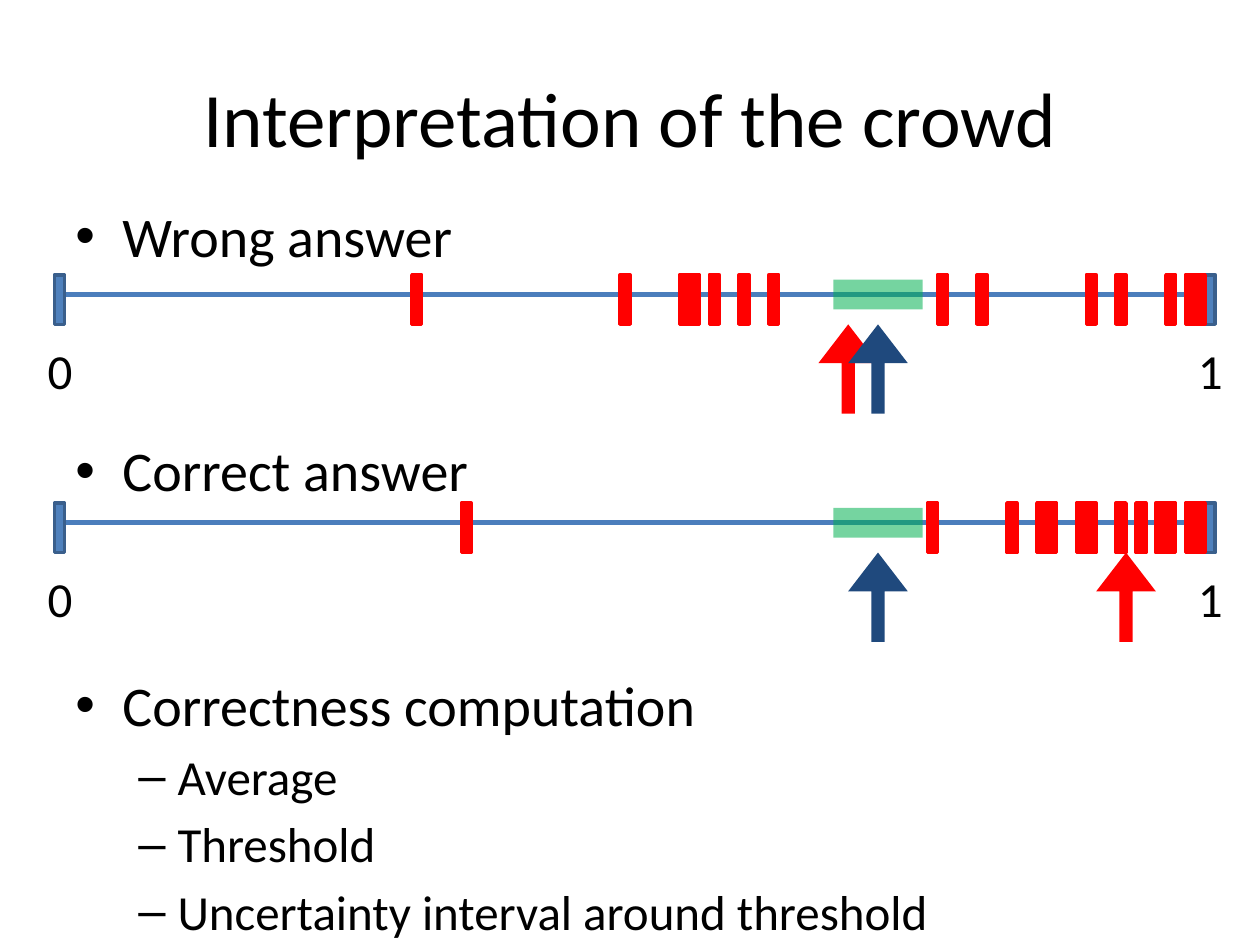
from dataclasses import dataclass
from lxml import etree
from pptx import Presentation
from pptx.dml.color import RGBColor
from pptx.enum.shapes import MSO_CONNECTOR, MSO_SHAPE
from pptx.enum.text import MSO_ANCHOR, PP_ALIGN
from pptx.oxml.ns import qn
from pptx.util import Cm, Pt

RECT, ARROW = MSO_SHAPE.RECTANGLE, MSO_SHAPE.UP_ARROW
LINE = MSO_CONNECTOR.STRAIGHT
TOP, MID = MSO_ANCHOR.TOP, MSO_ANCHOR.MIDDLE
LEFT, CENTER = PP_ALIGN.LEFT, PP_ALIGN.CENTER


@dataclass(frozen=True)
class Theme:
    font: str = "Calibri"
    text: str = "000000"
    axis: str = "4B7EBC"
    end: str = "4F81BD"
    edge: str = "3A5F8C"
    vote: str = "FF0000"
    limit: str = "1F497D"
    band: str = "00B050"
    title: int = 44
    head: int = 32
    sub: int = 28


THEME = Theme()
STEP = 0.2
LAST = 116
LIMIT = 16.6


def paint(fmt, color):
    fmt.solid()
    fmt.fore_color.rgb = RGBColor.from_string(color)


def add_box(shapes, x, y, w, h, anchor=TOP):
    frame = shapes.add_textbox(Cm(x), Cm(y), Cm(w), Cm(h)).text_frame
    frame.word_wrap = True
    frame.vertical_anchor = anchor
    return frame


def add_run(para, text, size):
    run = para.add_run()
    run.text = text
    run.font.name = THEME.font
    run.font.size = Pt(size)
    run.font.color.rgb = RGBColor.from_string(THEME.text)


def add_shape(shapes, kind, x, y, w, h, fill, edge=None):
    shape = shapes.add_shape(kind, Cm(x), Cm(y), Cm(w), Cm(h))
    shape.shadow.inherit = False
    paint(shape.fill, fill)
    if edge:
        paint(shape.line.fill, edge)
        shape.line.width = Pt(2)
    else:
        shape.line.fill.background()
    return shape


def add_title(shapes, x, y, w, h, text):
    para = add_box(shapes, x, y, w, h, MID).paragraphs[0]
    para.alignment = CENTER
    add_run(para, text, THEME.title)


def set_bullet(para, mark, left, hang):
    props = para._p.get_or_add_pPr()
    props.set("marL", str(Cm(left)))
    props.set("indent", str(-Cm(hang)))
    etree.SubElement(props, qn("a:buFont")).set("typeface", "Arial")
    etree.SubElement(props, qn("a:buChar")).set("char", mark)


def add_list(shapes, x, y, w, h, items):
    frame = add_box(shapes, x, y, w, h)
    for i, (level, text) in enumerate(items):
        para = frame.add_paragraph() if i else frame.paragraphs[0]
        para.alignment = LEFT
        para.level = level
        if level:
            mark, left, hang, gap, size = "–", 2.06, 0.79, 5, THEME.sub
        else:
            mark, left, hang, gap, size = "•", 0.95, 0.95, 95.5, THEME.head
        para.space_before = Pt(gap if i else 0)
        set_bullet(para, mark, left, hang)
        add_run(para, text, size)


def add_scale(shapes, x, y, votes):
    group = shapes.add_group_shape().shapes
    axis = group.add_connector(
        LINE, Cm(x), Cm(y + 0.39), Cm(x + LAST * STEP), Cm(y + 0.39))
    paint(axis.line.fill, THEME.axis)
    axis.line.width = Pt(3)
    etree.SubElement(axis._element.spPr, qn("a:effectLst"))
    ends = [(slot, THEME.end, THEME.edge) for slot in (0, LAST)]
    marks = [(slot, THEME.vote, THEME.vote) for slot in votes]
    for slot, fill, edge in ends + marks:
        add_shape(group, RECT, x + slot * STEP, y, STEP, 1, fill, edge)
    for text, left in (("0", -0.39), ("1", 22.8)):
        para = add_box(group, x + left, y + 1.2, 1, 1.45).paragraphs[0]
        add_run(para, text, THEME.sub)


def add_result(shapes, x, y, mean):
    for mid, color in ((mean, THEME.vote), (LIMIT, THEME.limit)):
        arrow = add_shape(shapes, ARROW, x + mid - 0.6, y + 1, 1.2, 1.8, color)
        arrow.adjustments[0] = 0.22
        arrow.adjustments[1] = 0.65
    band = add_shape(
        shapes, RECT, x + LIMIT - 0.9, y + 0.1, 1.8, 0.6, THEME.band)
    tint = band._element.spPr.find(qn("a:solidFill"))[0]
    etree.SubElement(tint, qn("a:alpha")).set("val", "54000")


def main():
    deck = Presentation()
    deck.slide_width, deck.slide_height = Cm(25.4), Cm(19.05)
    shapes = deck.slides.add_slide(deck.slide_layouts[6]).shapes
    add_title(shapes, 1.27, 0.76, 22.86, 3.18, "Interpretation of the crowd")
    add_list(shapes, 1.27, 3.94, 22.86, 14.4, [
        (0, "Wrong answer"),
        (0, "Correct answer"),
        (0, "Correctness computation"),
        (1, "Average"),
        (1, "Threshold"),
        (1, "Uncertainty interval around threshold"),
    ])
    wrong = (36, 57, 63, 64, 66, 69, 72, 89, 93, 104, 107, 112, 114, 115)
    right = (41, 88, 96, 99, 100, 103, 104, 107, 109, 111, 112, 114, 115)
    for top, votes, mean in ((5.54, wrong, 16), (10.14, right, 21.6)):
        add_scale(shapes, 1.1, top, votes)
        add_result(shapes, 1.1, top, mean)
    deck.save("out.pptx")


if __name__ == "__main__":
    main()
